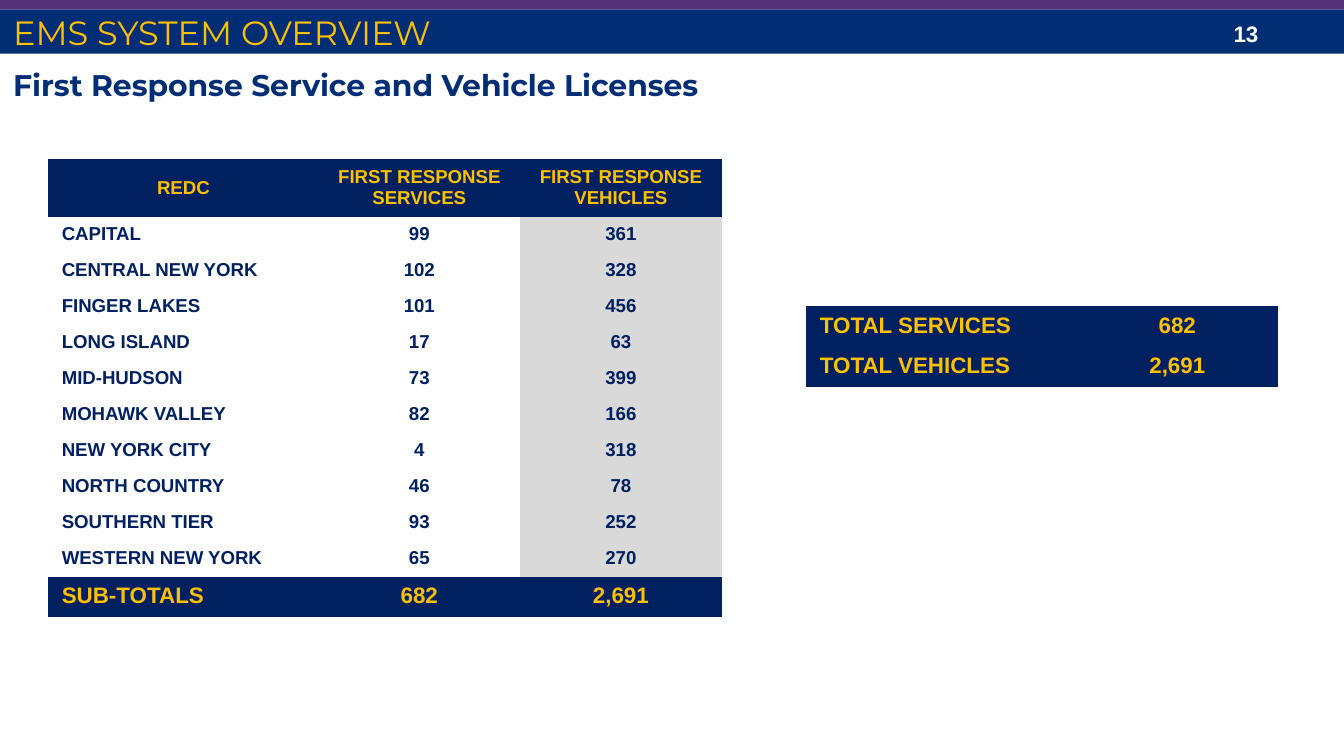
from pptx import Presentation
from pptx.dml.color import RGBColor
from pptx.enum.shapes import MSO_SHAPE
from pptx.enum.text import MSO_ANCHOR, PP_ALIGN
from pptx.oxml.ns import qn
from pptx.util import Inches, Pt

NAVY, BLUE, PURPLE = "002060", "002D73", "553278"
GOLD, GREY, WHITE = "FFC000", "D9D9D9", "FFFFFF"
WIDTH = 10
HEIGHT = WIDTH * 9 / 16
PLAIN_TABLE_STYLE = "{2D5ABB26-0587-4C30-8999-92F81FD0307C}"

# Content
BANDS = [(0.07, 0.33, BLUE), (-0.02, 0.09, PURPLE)]  # top, height, colour
# text, box, top inset, bottom inset, anchor, font, size, colour, bold
TEXTS = [
    ("13", (9.08, 0.1, 0.75, 0.3), 0.05, 0.05, MSO_ANCHOR.TOP,
     "Arial", 12, WHITE, True),
    ("EMS SYSTEM OVERVIEW", (0, 0.09, WIDTH, 0.3), 0, 0, MSO_ANCHOR.BOTTOM,
     "Montserrat", 18, GOLD, False),
    ("First Response Service and Vehicle Licenses", (0, 0.4, WIDTH, 0.37),
     0.1, 0, MSO_ANCHOR.TOP, "Montserrat", 16, BLUE, True),
]
HEADER = ("REDC", "FIRST RESPONSE\nSERVICES", "FIRST RESPONSE\nVEHICLES")
REGIONS = [
    ("CAPITAL", 99, 361),
    ("CENTRAL NEW YORK", 102, 328),
    ("FINGER LAKES", 101, 456),
    ("LONG ISLAND", 17, 63),
    ("MID-HUDSON", 73, 399),
    ("MOHAWK VALLEY", 82, 166),
    ("NEW YORK CITY", 4, 318),
    ("NORTH COUNTRY", 46, 78),
    ("SOUTHERN TIER", 93, 252),
    ("WESTERN NEW YORK", 65, 270),
]
services = sum(region[1] for region in REGIONS)
vehicles = sum(region[2] for region in REGIONS)
SUBTOTALS = ("SUB-TOTALS", services, vehicles)
TOTALS = [("TOTAL SERVICES", services), ("TOTAL VEHICLES", vehicles)]

# Table grid
NAME_WIDTH, NUMBER_WIDTH = 2.01, 1.5
TABLE_HEIGHT, HEADER_HEIGHT, TOTAL_HEIGHT = 3.41, 0.43, 0.3
REGION_HEIGHT = (TABLE_HEIGHT - HEADER_HEIGHT - TOTAL_HEIGHT) / len(REGIONS)


def color(value):
    return RGBColor.from_string(value)


def style_font(paragraph, name, size, text_color, bold):
    for run in paragraph.runs:
        font = run.font
        font.name, font.size, font.bold = name, Pt(size), bold
        font.color.rgb = color(text_color)


def add_band(slide, top, height, fill):
    shape = slide.shapes.add_shape(
        MSO_SHAPE.RECTANGLE, 0, Inches(top), Inches(WIDTH), Inches(height))
    shape.shadow.inherit = False
    shape.fill.solid()
    shape.fill.fore_color.rgb = color(fill)
    shape.line.fill.background()


def add_text(slide, text, box, inset_top, inset_bottom, anchor, *font):
    frame = slide.shapes.add_textbox(*map(Inches, box)).text_frame
    frame.word_wrap = True
    frame.vertical_anchor = anchor
    frame.margin_top, frame.margin_bottom = Inches(inset_top), Inches(inset_bottom)
    frame.text = text
    style_font(frame.paragraphs[0], *font)


def fill_cell(cell, value, fill, size, text_color, centered):
    if fill:
        cell.fill.solid()
        cell.fill.fore_color.rgb = color(fill)
    else:
        cell.fill.background()
    cell.text = value if isinstance(value, str) else f"{value:,}"
    for paragraph in cell.text_frame.paragraphs:
        paragraph.alignment = PP_ALIGN.CENTER if centered else PP_ALIGN.LEFT
        style_font(paragraph, "Arial", size, text_color, True)


def add_table(slide, left, top, rows):
    """Each row is (values, height, fills, text size, text colour)."""
    widths = [NAME_WIDTH] + [NUMBER_WIDTH] * (len(rows[0][0]) - 1)
    height = sum(row[1] for row in rows)
    frame = slide.shapes.add_table(
        len(rows), len(widths), Inches(left), Inches(top),
        Inches(sum(widths)), Inches(height))
    table = frame.table
    table.first_row = table.horz_banding = False
    # A plain style has no borders
    next(frame.element.iter(qn("a:tableStyleId"))).text = PLAIN_TABLE_STYLE
    for column, width in zip(table.columns, widths):
        column.width = Inches(width)
    for r, (values, row_height, fills, size, text_color) in enumerate(rows):
        table.rows[r].height = Inches(row_height)
        is_header = values is HEADER
        for c, (value, fill) in enumerate(zip(values, fills)):
            cell = table.cell(r, c)
            fill_cell(cell, value, fill, size, text_color, c > 0 or is_header)
            if is_header:
                cell.vertical_anchor = MSO_ANCHOR.MIDDLE


presentation = Presentation()
presentation.slide_width = Inches(WIDTH)
presentation.slide_height = Inches(HEIGHT)
slide = presentation.slides.add_slide(presentation.slide_layouts[6])

# Bands and headings
for band in BANDS:
    add_band(slide, *band)
for text in TEXTS:
    add_text(slide, *text)

# Regions table
region_rows = [(HEADER, HEADER_HEIGHT, [NAVY] * 3, 10, GOLD)]
region_rows += [(region, REGION_HEIGHT, [None, None, GREY], 10, NAVY)
                for region in REGIONS]
region_rows.append((SUBTOTALS, TOTAL_HEIGHT, [NAVY] * 3, 12, GOLD))
add_table(slide, 0.36, 1.18, region_rows)

# Totals table
add_table(slide, 6, 2.28, [(total, TOTAL_HEIGHT, [NAVY] * 2, 12, GOLD)
                           for total in TOTALS])

presentation.save("out.pptx")
